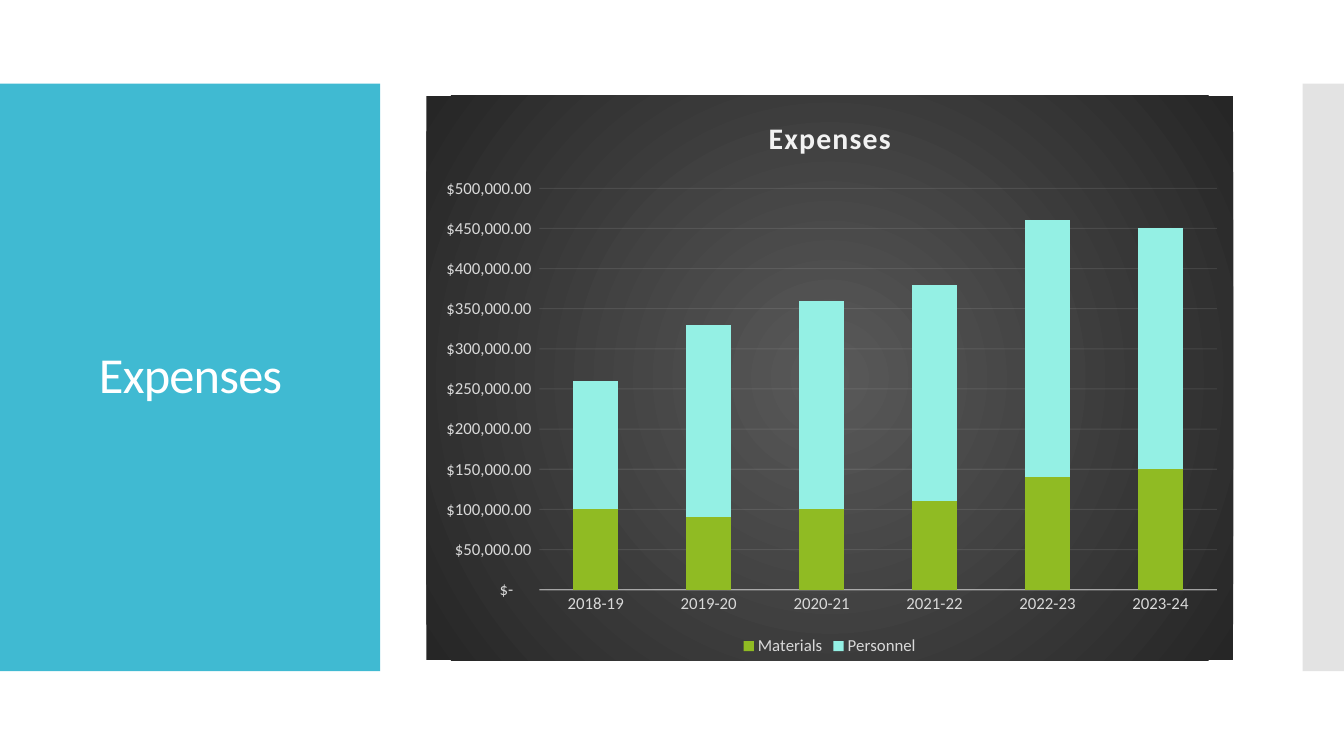
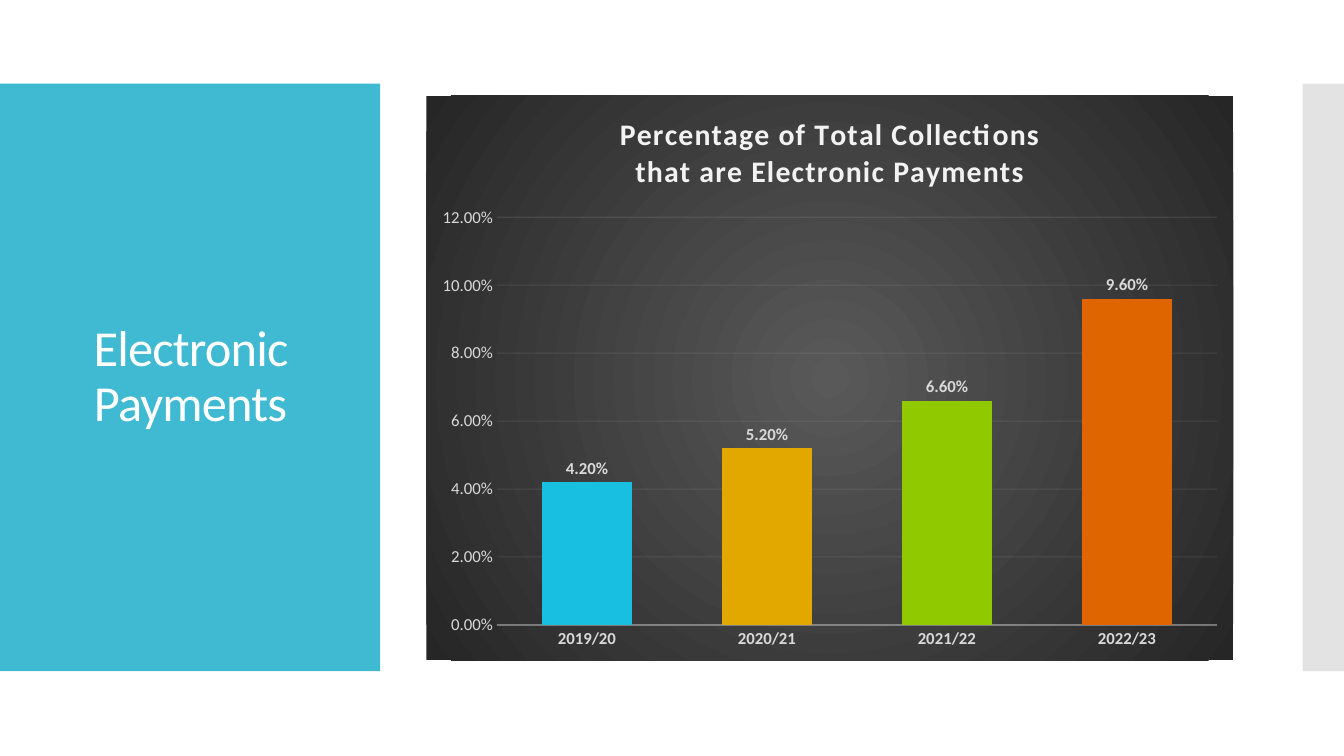
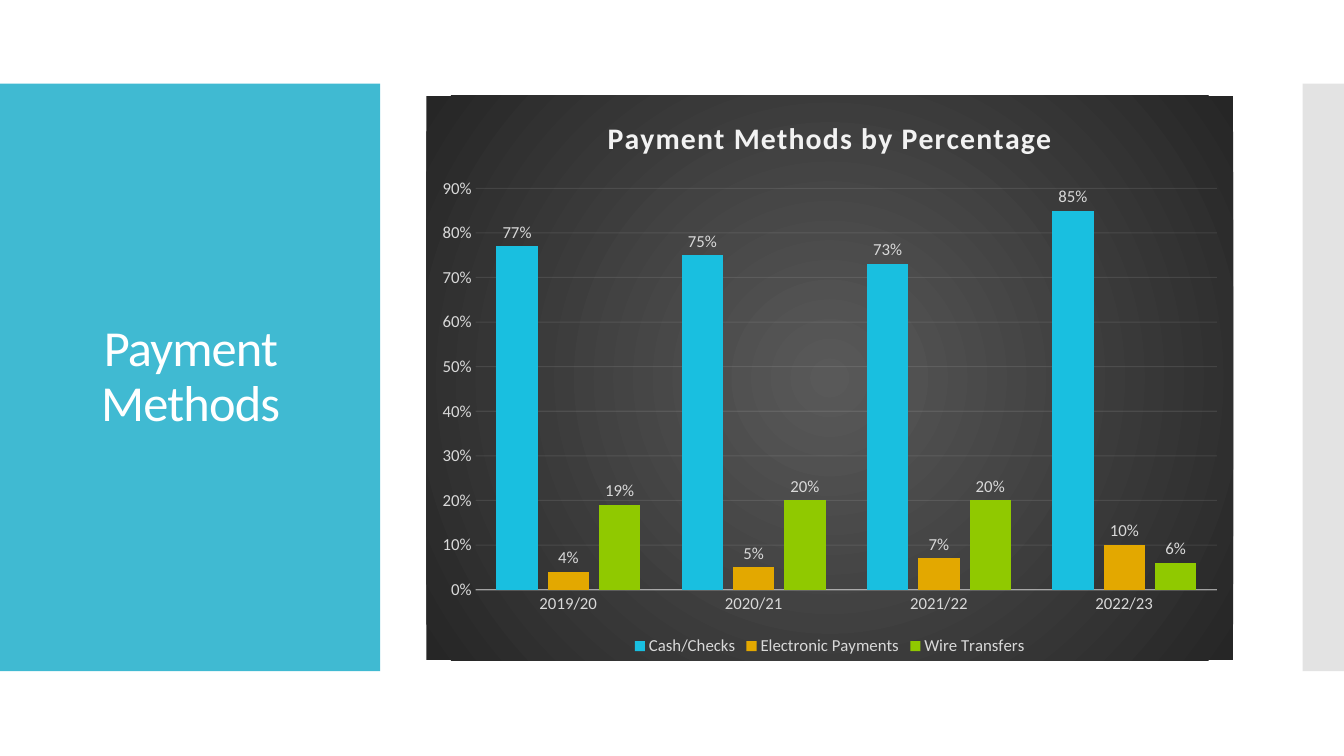
from pptx import Presentation
from pptx.chart.data import CategoryChartData
from pptx.dml.color import RGBColor
from pptx.enum.chart import XL_CHART_TYPE as ChartType
from pptx.enum.chart import XL_LABEL_POSITION as LabelPosition
from pptx.enum.chart import XL_LEGEND_POSITION as LegendPosition
from pptx.enum.chart import XL_TICK_MARK as TickMark
from pptx.enum.shapes import MSO_SHAPE as Preset
from pptx.enum.text import MSO_ANCHOR as Anchor
from pptx.enum.text import PP_ALIGN as Align
from pptx.oxml import parse_xml
from pptx.oxml.ns import nsdecls, qn
from pptx.util import Inches, Pt

FONT = "Calibri"
TEAL, SILVER, WHITE = "40BAD2", "C8C8C8", "FFFFFF"
PALE, LABEL = "F2F2F2", "D9D9D9"
CYAN, AMBER, LIME, ORANGE = "19BFE0", "E3A800", "90C900", "DF6500"
OLIVE, AQUA = "90BB23", "94F0E4"
DOLLARS = '_("$"* #,##0.00_);_("$"* \\(#,##0.00\\);_("$"* "-"??_);_(@_)'
YEARS = ["2019/20", "2020/21", "2021/22", "2022/23"]
BACKDROP = f"""<c:spPr {nsdecls("c", "a")}><a:gradFill><a:gsLst>
<a:gs pos="0"><a:srgbClr val="595959"/></a:gs>
<a:gs pos="100000"><a:srgbClr val="262626"/></a:gs></a:gsLst>
<a:path path="circle"><a:fillToRect l="50000" t="50000" r="50000" b="50000"/></a:path>
</a:gradFill><a:ln><a:noFill/></a:ln></c:spPr>"""


def color(value):
    return RGBColor.from_string(value)


def fade(element, percent):
    for tint in element.iter(qn("a:srgbClr")):
        tint.append(parse_xml(f'<a:alpha {nsdecls("a")} val="{percent * 1000}"/>'))


def track(element, points):
    for properties in element.iter(qn("a:rPr")):
        properties.set("spc", str(round(points * 100)))


def style(font, size, tint, bold=False):
    font.name, font.size, font.bold = FONT, Pt(size), bold
    font.color.rgb = color(tint)


class Deck:
    """Holds the shared style and the slide being built."""

    def __init__(self):
        self.file = Presentation()
        self.file.slide_width, self.file.slide_height = Inches(13.33), Inches(7.5)
        self.layout = self.file.slide_layouts[5]
        heading = self.layout.placeholders[0]
        heading.left, heading.top = Inches(0.28), Inches(1.23)
        heading.width, heading.height = Inches(3.22), Inches(5.03)
        self.slide = None

    def band(self, left, width, tint, opacity=100):
        bar = self.slide.shapes.add_shape(
            Preset.RECTANGLE, Inches(left), Inches(0.83), Inches(width), Inches(5.83))
        bar.shadow.inherit = False
        bar.fill.solid()
        bar.fill.fore_color.rgb = color(tint)
        bar.line.fill.background()
        if opacity < 100:
            fade(bar.element, opacity)
        self.layout.shapes.element.insert(2, bar.element)

    def add_slide(self, heading):
        first = self.slide is None
        self.slide = self.file.slides.add_slide(self.layout)
        if first:
            self.band(0, 3.77, TEAL)
            self.band(12.92, 0.41, SILVER, 50)
        title = self.slide.shapes.title
        title.text_frame.vertical_anchor = Anchor.MIDDLE
        paragraph = title.text_frame.paragraphs[0]
        paragraph.alignment, paragraph.line_spacing = Align.CENTER, 0.9
        run = paragraph.add_run()
        run.text = heading
        style(run.font, 36, WHITE)
        track(title.element, -0.6)

    def add_columns(self, lines, categories, series, top, step, number_format,
                    stacked=False, point_tints=()):
        data = CategoryChartData(number_format=number_format)
        data.categories = categories
        for name, values, _ in series:
            data.add_series(name, values)
        kind = ChartType.COLUMN_STACKED if stacked else ChartType.COLUMN_CLUSTERED
        chart = self.slide.shapes.add_chart(
            kind, Inches(4.23), Inches(0.95), Inches(8), Inches(5.6), data).chart
        style(chart.font, 10, "000000")
        chart.element.find(qn("c:chart")).addnext(parse_xml(BACKDROP))
        self.chart_title(chart, lines)
        self.axes(chart, top, step, number_format, bool(point_tints))
        chart.has_legend = len(series) > 1
        if chart.has_legend:
            chart.legend.position = LegendPosition.BOTTOM
            chart.legend.include_in_layout = False
            style(chart.legend.font, 12, LABEL)

        plot = chart.plots[0]
        plot.vary_by_categories = False
        plot.gap_width, plot.overlap = (150, 100) if stacked else (100, -24)
        for columns, (_, _, tint) in zip(plot.series, series):
            columns.invert_if_negative = False
            columns.format.fill.solid()
            columns.format.fill.fore_color.rgb = color(tint)
            if not stacked:
                labels = columns.data_labels
                labels.show_value = True
                labels.position = LabelPosition.OUTSIDE_END
                labels.number_format = number_format
                labels.number_format_is_linked = False
                style(labels.font, 12, LABEL, bool(point_tints))
            for index, point_tint in enumerate(point_tints):
                fill = columns.points[index].format.fill
                fill.solid()
                fill.fore_color.rgb = color(point_tint)

    def chart_title(self, chart, lines):
        chart.has_title = True
        chart.chart_title.include_in_layout = False
        frame = chart.chart_title.text_frame
        for index, line in enumerate(lines):
            paragraph = frame.add_paragraph() if index else frame.paragraphs[0]
            run = paragraph.add_run()
            run.text = line
            style(run.font, 21.3, PALE, True)
        track(chart.element.find(".//" + qn("c:title")), 1)

    def axes(self, chart, top, step, number_format, bold):
        years, amounts = chart.category_axis, chart.value_axis
        for axis in (years, amounts):
            axis.major_tick_mark = axis.minor_tick_mark = TickMark.NONE
        style(years.tick_labels.font, 12, LABEL, bold)
        style(amounts.tick_labels.font, 12, LABEL)
        amounts.minimum_scale, amounts.maximum_scale = 0, top
        amounts.major_unit = step
        amounts.tick_labels.number_format = number_format
        amounts.tick_labels.number_format_is_linked = False
        amounts.format.line.fill.background()
        amounts.has_major_gridlines = True
        for line, width in ((years.format.line, 1),
                            (amounts.major_gridlines.format.line, 0.75)):
            line.width = Pt(width)
            line.color.rgb = color(PALE)
        fade(chart.element.find(f".//{qn('c:catAx')}/{qn('c:spPr')}"), 54)
        fade(chart.element.find(".//" + qn("c:majorGridlines")), 10)


def main():
    deck = Deck()

    deck.add_slide("Expenses")
    deck.add_columns(
        ["Expenses"],
        ["2018-19", "2019-20", "2020-21", "2021-22", "2022-23", "2023-24"],
        [("Materials", [100000, 90000, 100000, 110000, 140000, 150000], OLIVE),
         ("Personnel", [160000, 240000, 260000, 270000, 320000, 300000], AQUA)],
        500000, 50000, DOLLARS, stacked=True)

    deck.add_slide("Electronic Payments")
    deck.add_columns(
        ["Percentage of Total Collections", "that are Electronic Payments"], YEARS,
        [("Series 1", [0.042, 0.052, 0.066, 0.096], CYAN)],
        0.12, 0.02, "0.00%", point_tints=(CYAN, AMBER, LIME, ORANGE))

    deck.add_slide("Payment Methods")
    deck.add_columns(
        ["Payment Methods by Percentage"], YEARS,
        [("Cash/Checks", [0.77, 0.75, 0.73, 0.85], CYAN),
         ("Electronic Payments", [0.04, 0.05, 0.07, 0.1], AMBER),
         ("Wire Transfers", [0.19, 0.2, 0.2, 0.06], LIME)],
        0.9, 0.1, "0%")

    deck.file.save("out.pptx")


if __name__ == "__main__":
    main()
